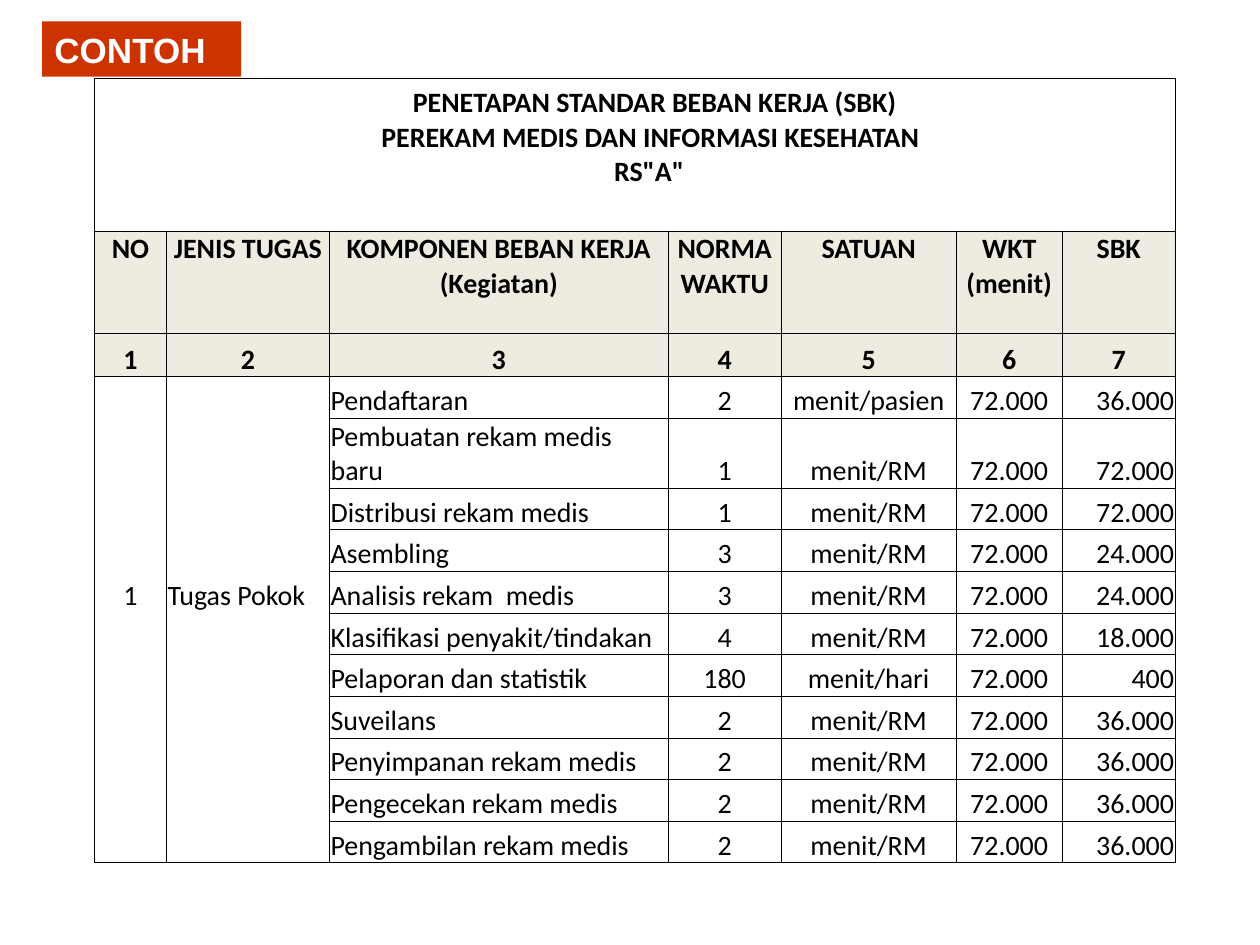
import pptx
import pptx.dml.color
import pptx.enum.shapes
import pptx.enum.text
import pptx.oxml.ns
import pptx.util
import lxml.etree

Pt = pptx.util.Pt
qn = pptx.oxml.ns.qn
ALIGN = pptx.enum.text.PP_ALIGN
ANCHOR = pptx.enum.text.MSO_ANCHOR

BLACK = pptx.dml.color.RGBColor(0x00, 0x00, 0x00)
WHITE = pptx.dml.color.RGBColor(0xFF, 0xFF, 0xFF)
RED = pptx.dml.color.RGBColor(0xCC, 0x33, 0x00)
BEIGE = pptx.dml.color.RGBColor(0xEE, 0xEC, 0xE1)

BADGE_FONT = {"name": "Arial", "size": Pt(20), "bold": True}
BOLD_FONT = {"name": "Calibri", "size": Pt(16), "bold": True}
BODY_FONT = {"name": "Calibri", "size": Pt(16), "bold": False}
CELL_FORMAT = {
    "margin_left": Pt(0.7),
    "margin_right": Pt(0.7),
    "margin_top": Pt(0.7),
    "margin_bottom": Pt(0),
    "vertical_anchor": ANCHOR.BOTTOM,
}

COLUMN_WIDTHS = [41.1, 93.2, 193.6, 64.6, 100, 60.6, 64.6]
ROW_HEIGHT = 23.8
SPECIAL_HEIGHTS = {1: 39.3, 3: 58.3, 4: 25.1, 6: 39.4}
TITLE_ROWS = 3
HEADER_ROW = 3
NUMBER_ROW = 4
FIRST_TASK_ROW = 5
GROUP_ROW = 9
MINUTES = "72.000"

TITLE_LINES = [
    (0, "PENETAPAN STANDAR BEBAN KERJA (SBK)", 47),
    (1, "PEREKAM MEDIS DAN INFORMASI KESEHATAN", 29),
    (1, 'RS"A"', 162),
]
HEADERS = [
    "NO", "JENIS TUGAS", "KOMPONEN BEBAN KERJA (Kegiatan)",
    "NORMA WAKTU", "SATUAN", "WKT (menit)", "SBK",
]
TASKS = [
    ("Pendaftaran", "2", "menit/pasien", "36.000"),
    ("Pembuatan rekam medis baru", "1", "menit/RM", "72.000"),
    ("Distribusi rekam medis", "1", "menit/RM", "72.000"),
    ("Asembling", "3", "menit/RM", "24.000"),
    ("Analisis rekam  medis", "3", "menit/RM", "24.000"),
    ("Klasifikasi penyakit/tindakan", "4", "menit/RM", "18.000"),
    ("Pelaporan dan statistik", "180", "menit/hari", "400"),
    ("Suveilans", "2", "menit/RM", "36.000"),
    ("Penyimpanan rekam medis", "2", "menit/RM", "36.000"),
    ("Pengecekan rekam medis", "2", "menit/RM", "36.000"),
    ("Pengambilan rekam medis", "2", "menit/RM", "36.000"),
]
ROW_COUNT = FIRST_TASK_ROW + len(TASKS)
LAST_ROW = ROW_COUNT - 1
LAST_COLUMN = len(COLUMN_WIDTHS) - 1


def apply_format(target, values):
    for name, value in values.items():
        setattr(target, name, value)


def write(para, text, font, align=ALIGN.LEFT, color=BLACK):
    para.alignment = align
    span = para.add_run()
    span.text = text
    apply_format(span.font, font)
    span.font.color.rgb = color


def add_badge(page):
    box = page.shapes.add_shape(
        pptx.enum.shapes.MSO_SHAPE.RECTANGLE, Pt(24), Pt(12.2), Pt(113.8), Pt(31.6))
    box.shadow.inherit = False
    box.fill.solid()
    box.fill.fore_color.rgb = RED
    box.line.fill.background()
    write(box.text_frame.paragraphs[0], "CONTOH", BADGE_FONT, color=WHITE)


def block_of(row, column):
    if row < TITLE_ROWS:
        return 0, 0, TITLE_ROWS - 1, LAST_COLUMN
    if row >= FIRST_TASK_ROW and column < 2:
        return FIRST_TASK_ROW, column, LAST_ROW, column
    return row, column, row, column


def set_borders(cell, row, column):
    top, left, bottom, right = block_of(row, column)
    sides = {"L": column == left, "R": column == right, "T": row == top, "B": row == bottom}
    properties = cell._tc.get_or_add_tcPr()
    for side, visible in sides.items():
        line = lxml.etree.SubElement(properties, qn(f"a:ln{side}"), w=str(Pt(0.5)))
        if visible:
            fill = lxml.etree.SubElement(line, qn("a:solidFill"))
            lxml.etree.SubElement(fill, qn("a:srgbClr"), val=str(BLACK))
        else:
            lxml.etree.SubElement(line, qn("a:noFill"))


def format_cell(cell, row, column):
    apply_format(cell, CELL_FORMAT)
    set_borders(cell, row, column)
    if row in (HEADER_ROW, NUMBER_ROW):
        cell.fill.solid()
        cell.fill.fore_color.rgb = BEIGE
    else:
        cell.fill.background()
    if not cell.text:
        para = cell.text_frame.paragraphs[0]
        lxml.etree.SubElement(para._p, qn("a:endParaRPr"), sz="1600")


def write_titles(table):
    for row in (0, 1):
        table.cell(row, 2).merge(table.cell(row, 4))
    for row, text, indent in TITLE_LINES:
        frame = table.cell(row, 2).text_frame
        para = frame.add_paragraph() if frame.text else frame.paragraphs[0]
        write(para, text, BOLD_FONT)
        para._p.get_or_add_pPr().set("marL", str(Pt(indent)))


def write_cell(table, row, column, text, font, align=ALIGN.CENTER):
    write(table.cell(row, column).text_frame.paragraphs[0], text, font, align)


def write_tasks(table):
    write_cell(table, GROUP_ROW, 0, "1", BODY_FONT)
    write_cell(table, GROUP_ROW, 1, "Tugas Pokok", BODY_FONT, ALIGN.LEFT)
    alignments = [ALIGN.LEFT, ALIGN.CENTER, ALIGN.CENTER, ALIGN.CENTER, ALIGN.RIGHT]
    for row, (task, norm, unit, standard) in enumerate(TASKS, FIRST_TASK_ROW):
        values = (task, norm, unit, MINUTES, standard)
        for column, (text, align) in enumerate(zip(values, alignments), 2):
            write_cell(table, row, column, text, BODY_FONT, align)


def add_workload_table(page):
    heights = [SPECIAL_HEIGHTS.get(row, ROW_HEIGHT) for row in range(ROW_COUNT)]
    table = page.shapes.add_table(
        ROW_COUNT, len(COLUMN_WIDTHS), Pt(54), Pt(44.6),
        Pt(sum(COLUMN_WIDTHS)), Pt(sum(heights))).table
    apply_format(table, {"first_row": False, "horz_banding": False})
    for column, width in zip(table.columns, COLUMN_WIDTHS):
        column.width = Pt(width)
    for row, height in zip(table.rows, heights):
        row.height = Pt(height)
    write_titles(table)
    for column, header in enumerate(HEADERS):
        write_cell(table, HEADER_ROW, column, header, BOLD_FONT)
        write_cell(table, NUMBER_ROW, column, str(column + 1), BOLD_FONT)
    write_tasks(table)
    for row in range(ROW_COUNT):
        for column in range(len(COLUMN_WIDTHS)):
            format_cell(table.cell(row, column), row, column)
    for column in range(len(COLUMN_WIDTHS)):
        table.cell(HEADER_ROW, column).vertical_anchor = ANCHOR.TOP


def main():
    deck = pptx.Presentation()
    deck.slide_width = Pt(720)
    deck.slide_height = Pt(540)
    page = deck.slides.add_slide(deck.slide_layouts[6])
    add_badge(page)
    add_workload_table(page)
    deck.save("out.pptx")


if __name__ == "__main__":
    main()
